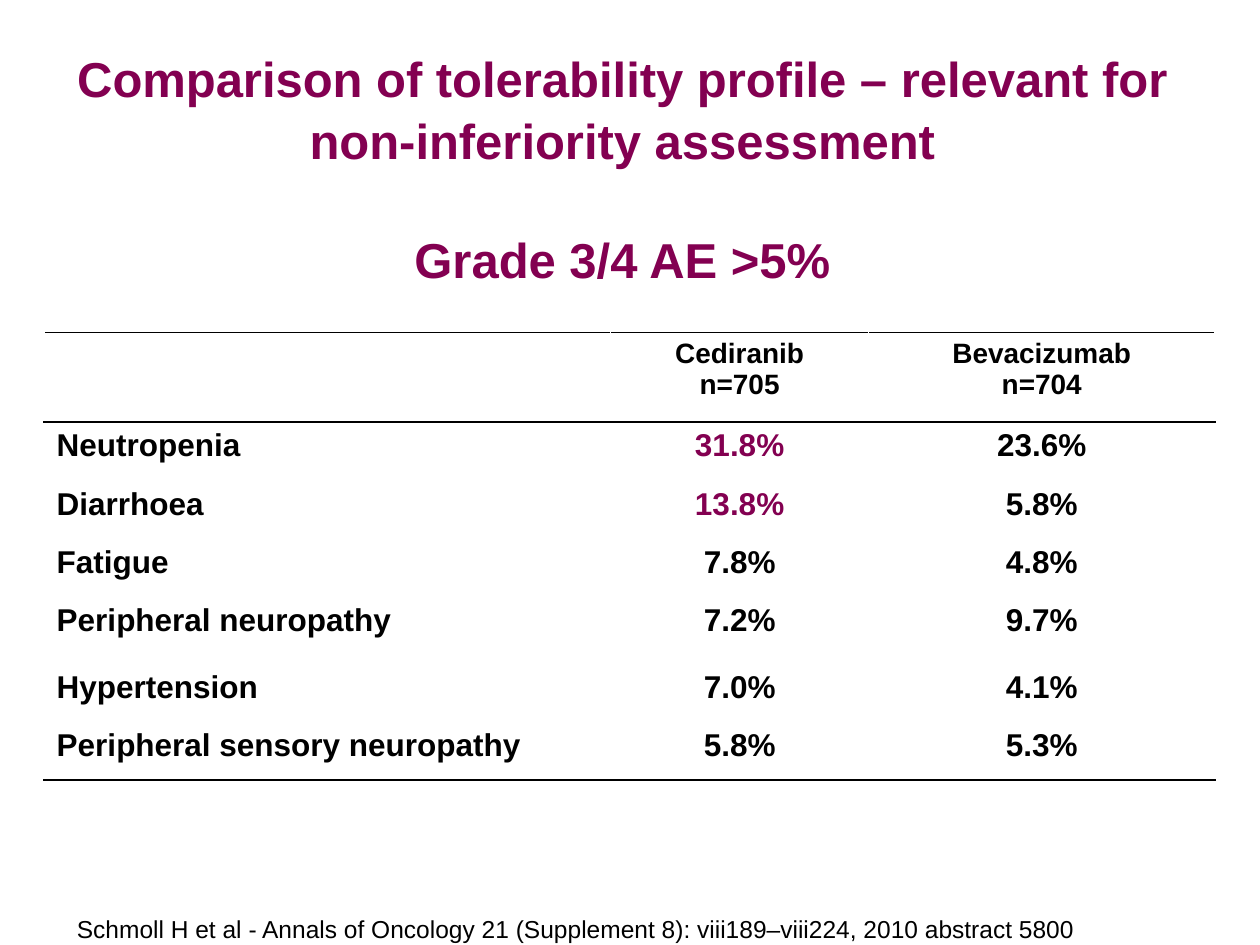
from dataclasses import dataclass

from lxml.etree import SubElement
from pptx import Presentation
from pptx.dml.color import RGBColor
from pptx.enum.text import MSO_ANCHOR, PP_ALIGN
from pptx.oxml.ns import qn
from pptx.util import Cm, Pt


@dataclass(frozen=True)
class Theme:
    font: str = "Arial"
    accent: str = "830051"
    ink: str = "000000"
    paper: str = "FFFFFF"
    title: int = 28
    body: int = 18
    head: int = 16
    note: int = 14


THEME = Theme()
HEADER = ["", "Cediranib\vn=705", "Bevacizumab\vn=704"]
EVENTS = [
    ["Neutropenia", "31.8%", "23.6%"],
    ["Diarrhoea", "13.8%", "5.8%"],
    ["Fatigue", "7.8%", "4.8%"],
    ["Peripheral neuropathy", "7.2%", "9.7%"],
    ["Hypertension", "7.0%", "4.1%"],
    ["Peripheral sensory neuropathy", "5.8%", "5.3%"],
]
HIGHLIGHTS = {"31.8%", "13.8%"}
COL_SHARES = [4.5, 2.05, 2.75]
ROW_SHARES = [0.71, 0.46, 0.46, 0.46, 0.53, 0.46, 0.46]


def write(p, text, size=THEME.body, color=THEME.ink, bold=True,
          align=PP_ALIGN.LEFT, before=0, spacing=1.0):
    p.text = text
    p.alignment = align
    p.space_before = Pt(before)
    p.line_spacing = spacing
    p.font.size = Pt(size)
    for r in p.runs:
        r.font.name = THEME.font
        r.font.size = Pt(size)
        r.font.bold = bold
        r.font.color.rgb = RGBColor.from_string(color)


def add_box(s, x, y, w, h, wrap=True):
    tf = s.shapes.add_textbox(Cm(x), Cm(y), Cm(w), Cm(h)).text_frame
    tf.word_wrap = wrap
    tf.vertical_anchor = MSO_ANCHOR.TOP
    return tf


def set_borders(cell, top, bottom):
    tcPr = cell._tc.get_or_add_tcPr()
    sides = [("L", THEME.paper), ("R", THEME.paper), ("T", top), ("B", bottom)]
    for i, (side, color) in enumerate(sides):
        ln = SubElement(tcPr, qn(f"a:ln{side}"), w=str(Pt(1)))
        fill = SubElement(ln, qn("a:solidFill"))
        SubElement(fill, qn("a:srgbClr"), val=color)
        tcPr.insert(i, ln)


def add_title(s, x, y, w, h):
    tf = add_box(s, x, y, w, h)
    tf.margin_top = Cm(0.18)
    style = dict(size=THEME.title, color=THEME.accent,
                 align=PP_ALIGN.CENTER, spacing=1.04)
    write(tf.paragraphs[0], "Comparison of tolerability profile – relevant for "
          "non-inferiority assessment", **style)
    write(tf.add_paragraph(), "Grade 3/4 AE >5%", before=33.5, **style)


def add_event_table(s, x, y, w, h):
    rows = [HEADER, *EVENTS]
    tbl = s.shapes.add_table(len(rows), len(HEADER),
                             Cm(x), Cm(y), Cm(w), Cm(h)).table
    tbl.first_row = tbl.horz_banding = False
    for col, share in zip(tbl.columns, COL_SHARES):
        col.width = Cm(w * share / sum(COL_SHARES))
    for row, share in zip(tbl.rows, ROW_SHARES):
        row.height = Cm(h * share / sum(ROW_SHARES))
    ruled = {0, 1, len(rows)}
    for i, row in enumerate(rows):
        top, bottom = (THEME.ink if k in ruled else THEME.paper
                       for k in (i, i + 1))
        for j, text in enumerate(row):
            cell = tbl.cell(i, j)
            cell.fill.background()
            cell.vertical_anchor = MSO_ANCHOR.TOP
            write(cell.text_frame.paragraphs[0], text,
                  size=THEME.body if i else THEME.head,
                  color=THEME.accent if text in HIGHLIGHTS else THEME.ink,
                  align=PP_ALIGN.CENTER if j else PP_ALIGN.LEFT)
            set_borders(cell, top, bottom)


def add_citation(s, x, y, w, h):
    tf = add_box(s, x, y, w, h, wrap=False)
    write(tf.paragraphs[0], "Schmoll H et al - Annals of Oncology 21 "
          "(Supplement 8): viii189–viii224, 2010 abstract 5800",
          size=THEME.note, bold=False)


def main():
    prs = Presentation()
    prs.slide_width, prs.slide_height = Cm(25.4), Cm(19.05)
    s = prs.slides.add_slide(prs.slide_layouts[6])
    s.background.fill.solid()
    s.background.fill.fore_color.rgb = RGBColor.from_string(THEME.paper)
    add_title(s, 0.86, 0.76, 23.37, 1.42)
    add_event_table(s, 0.89, 6.7, 23.6, 9.02)
    add_citation(s, 1.3, 18.31, 20.73, 0.74)
    prs.save("out.pptx")


if __name__ == "__main__":
    main()
